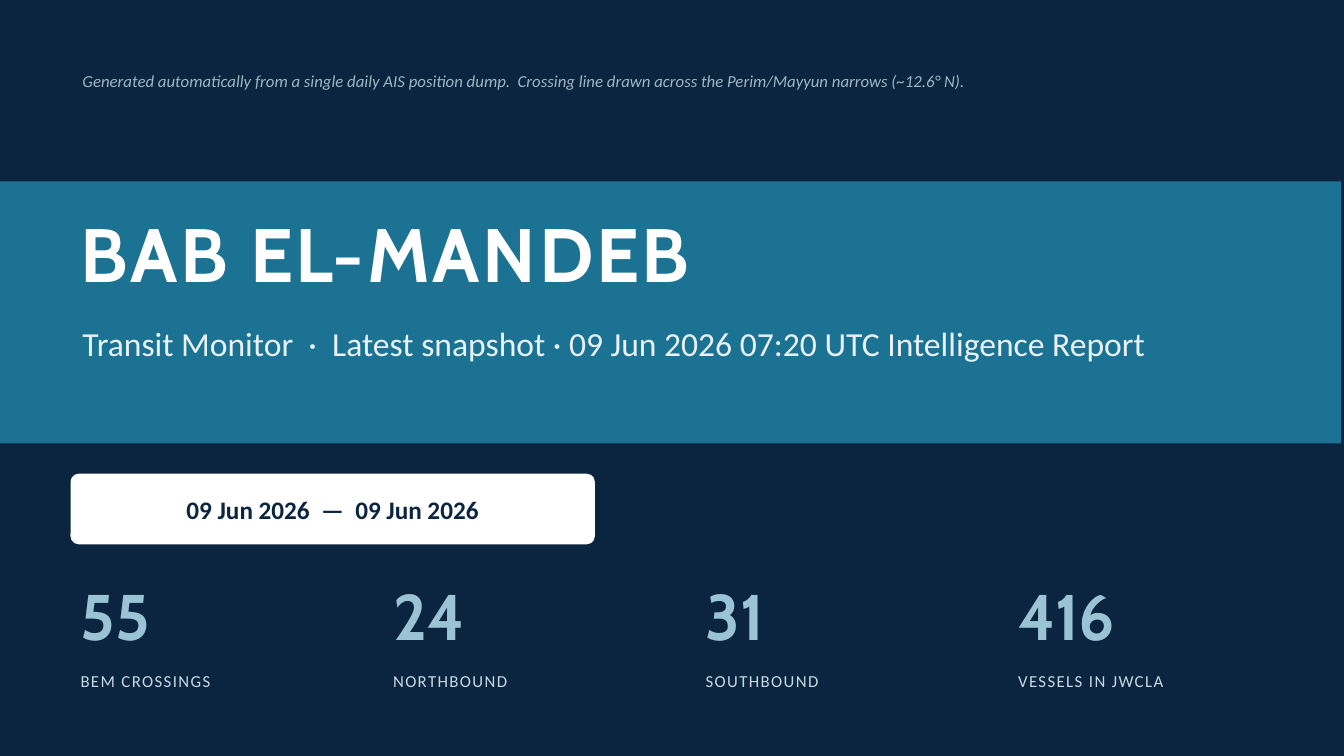
from pptx import Presentation
from pptx.dml.color import RGBColor
from pptx.enum import shapes, text
from pptx.util import Inches, Pt

NAVY = RGBColor(0x0B, 0x24, 0x40)
TEAL = RGBColor(0x1C, 0x72, 0x93)
WHITE = RGBColor(0xFF, 0xFF, 0xFF)
ICE = RGBColor(0xE8, 0xF1, 0xF5)
SKY = RGBColor(0x9A, 0xC4, 0xD6)
MIST = RGBColor(0xC9, 0xD9, 0xE2)
SLATE = RGBColor(0x9F, 0xB6, 0xC4)

HEADING = "Cabin"
BODY = "Calibri"
LEFT = 0.7
INDENT = 0.72
FULL_WIDTH = 11.9
STAT_PITCH = 3.1
STAT_WIDTH = 2.85
STATS = [
    ("55", "BEM CROSSINGS"),
    ("24", "NORTHBOUND"),
    ("31", "SOUTHBOUND"),
    ("416", "VESSELS IN JWCLA"),
]


def add_panel(slide, kind, bounds, color):
    panel = slide.shapes.add_shape(kind, *map(Inches, bounds))
    panel.shadow.inherit = False
    panel.fill.solid()
    panel.fill.fore_color.rgb = color
    panel.line.fill.background()
    return panel


def add_label(slide, wording, bounds, size, color, face=BODY, bold=False,
              italic=False, spacing=0, align=text.PP_ALIGN.LEFT):
    frame = slide.shapes.add_textbox(*map(Inches, bounds)).text_frame
    frame.word_wrap = True
    frame.vertical_anchor = text.MSO_ANCHOR.MIDDLE
    line = frame.paragraphs[0]
    line.alignment = align
    run = line.add_run()
    run.text = wording
    font = run.font
    font.name = face
    font.size = Pt(size)
    font.bold = bold
    font.italic = italic
    font.color.rgb = color
    if spacing:
        run._r.get_or_add_rPr().set("spc", str(spacing * 100))


def add_banner(slide):
    add_panel(slide, shapes.MSO_SHAPE.RECTANGLE, (0, 1.8, 13.3, 2.6), TEAL)
    add_label(slide, "BAB EL-MANDEB", (LEFT, 1.95, FULL_WIDTH, 1.1), 54, WHITE,
              HEADING, bold=True, spacing=2)
    add_label(slide, "Transit Monitor  ·  Latest snapshot · 09 Jun 2026 07:20 UTC Intelligence Report",
              (INDENT, 3.05, FULL_WIDTH, 0.7), 24, ICE)


def add_period(slide):
    bounds = (LEFT, 4.7, 5.2, 0.7)
    pill = add_panel(slide, shapes.MSO_SHAPE.ROUNDED_RECTANGLE, bounds, WHITE)
    pill.adjustments[0] = 0.114
    add_label(slide, "09 Jun 2026  —  09 Jun 2026", bounds, 18, NAVY,
              bold=True, align=text.PP_ALIGN.CENTER)


def add_stat(slide, left, value, caption):
    add_label(slide, value, (left, 5.65, STAT_WIDTH, 0.9), 46, SKY, HEADING, bold=True)
    add_label(slide, caption, (left, 6.55, STAT_WIDTH, 0.4), 12, MIST, spacing=1)


def main():
    deck = Presentation()
    deck.slide_width = Inches(13.33)
    deck.slide_height = Inches(7.5)
    slide = deck.slides.add_slide(deck.slide_layouts[6])
    slide.background.fill.solid()
    slide.background.fill.fore_color.rgb = NAVY

    add_banner(slide)
    add_period(slide)
    for column, (value, caption) in enumerate(STATS):
        add_stat(slide, LEFT + column * STAT_PITCH, value, caption)
    add_label(slide, "Generated automatically from a single daily AIS position dump.  "
              "Crossing line drawn across the Perim/Mayyun narrows (~12.6° N).",
              (INDENT, 0.55, FULL_WIDTH, 0.5), 12, SLATE, italic=True)
    deck.save("out.pptx")


if __name__ == "__main__":
    main()
